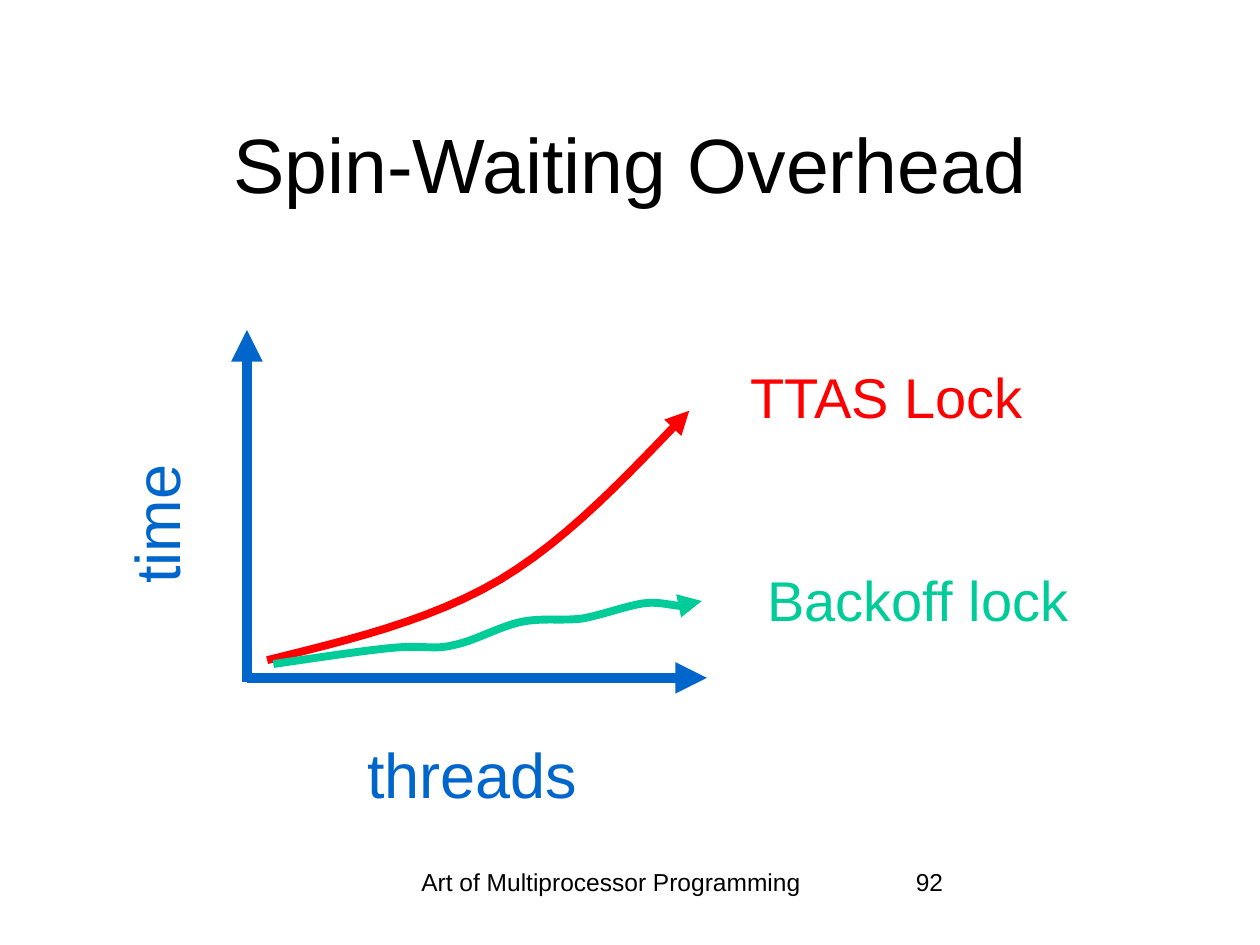
import pptx
import pptx.dml.color
import pptx.enum.shapes
import pptx.enum.text
import pptx.oxml
import pptx.oxml.ns
import pptx.util

Inches = pptx.util.Inches
ALIGN = pptx.enum.text.PP_ALIGN
ANCHOR = pptx.enum.text.MSO_ANCHOR

BLACK = pptx.dml.color.RGBColor(0x00, 0x00, 0x00)
BLUE = pptx.dml.color.RGBColor(0x00, 0x66, 0xCC)
RED = pptx.dml.color.RGBColor(0xFF, 0x00, 0x00)
GREEN = pptx.dml.color.RGBColor(0x00, 0xCC, 0x99)
FONT = "Arial"
STEPS_PER_CURVE = 12

TTAS_CURVE = [
    (0.16, 2.62), (0.8, 2.46), (1.45, 2.31), (2.01, 1.98),
    (2.56, 1.65), (3.03, 1.14), (3.51, 0.64),
]
BACKOFF_CURVE = [
    (0.21, 2.65), (0.57, 2.6), (0.94, 2.54), (1.18, 2.52),
    (1.41, 2.5), (1.48, 2.54), (1.64, 2.5),
    (1.8, 2.47), (1.99, 2.36), (2.16, 2.32),
    (2.33, 2.28), (2.49, 2.31), (2.66, 2.29),
    (2.82, 2.26), (3.01, 2.19), (3.14, 2.17),
    (3.27, 2.15), (3.38, 2.19), (3.46, 2.19),
    (3.54, 2.19), (3.57, 2.17), (3.61, 2.15),
]


def format_text(text_frame, text, size, color, alignment):
    text_frame.text = text
    paragraph = text_frame.paragraphs[0]
    paragraph.alignment = alignment
    font = paragraph.runs[0].font
    font.name = FONT
    font.size = pptx.util.Pt(size)
    font.color.rgb = color


def add_label(slide, box, text, size, color, alignment, wrap=False):
    label = slide.shapes.add_textbox(*(Inches(value) for value in box))
    label.text_frame.word_wrap = wrap
    format_text(label.text_frame, text, size, color, alignment)
    return label


def style_arrow(shape, color, width):
    shape.line.color.rgb = color
    shape.line.width = pptx.util.Pt(width)
    line = shape.line._get_or_add_ln()
    tail = pptx.oxml.parse_xml(
        f'<a:tailEnd {pptx.oxml.ns.nsdecls("a")} type="triangle"/>'
    )
    line.append(tail)


def add_axis(slide, start, end):
    points = [Inches(value) for value in (*start, *end)]
    axis = slide.shapes.add_connector(
        pptx.enum.shapes.MSO_CONNECTOR.STRAIGHT, *points
    )
    style_arrow(axis, BLUE, 6)
    effects = pptx.oxml.parse_xml(f'<a:effectLst {pptx.oxml.ns.nsdecls("a")}/>')
    axis._element.spPr.append(effects)


def bezier_point(controls, t):
    weights = ((1 - t) ** 3, 3 * t * (1 - t) ** 2, 3 * t ** 2 * (1 - t), t ** 3)
    return tuple(
        sum(weight * point[axis] for weight, point in zip(weights, controls))
        for axis in (0, 1)
    )


def add_curve(slide, left, top, controls, color):
    points = [controls[0]]
    for index in range(0, len(controls) - 1, 3):
        segment = controls[index:index + 4]
        points += [
            bezier_point(segment, step / STEPS_PER_CURVE)
            for step in range(1, STEPS_PER_CURVE + 1)
        ]
    placed = [(Inches(left + x), Inches(top + y)) for x, y in points]
    builder = slide.shapes.build_freeform(*placed[0])
    builder.add_line_segments(placed[1:], close=False)
    curve = builder.convert_to_shape()
    curve.shadow.inherit = False
    curve.fill.background()
    style_arrow(curve, color, 4.5)


def add_title(slide, box):
    title = slide.shapes.title
    title.left, title.top, title.width, title.height = (
        Inches(value) for value in box
    )
    title.text_frame.vertical_anchor = ANCHOR.MIDDLE
    format_text(title.text_frame, "Spin-Waiting Overhead", 44, BLACK, ALIGN.CENTER)


def add_plot(slide, box):
    left, top, width, height = box
    bottom = top + height
    add_axis(slide, (left, bottom + 0.03), (left, top))
    add_axis(slide, (left, bottom), (left + width, bottom))
    add_curve(slide, left, top, TTAS_CURVE, RED)
    add_curve(slide, left, top, BACKOFF_CURVE, GREEN)
    add_label(slide, (left + 3.87, top + 0.21, 2.39, 0.64),
              "TTAS Lock", 32, RED, ALIGN.RIGHT)
    add_label(slide, (left + 4.01, top + 1.82, 2.61, 0.64),
              "Backoff lock", 32, GREEN, ALIGN.RIGHT)
    add_label(slide, (left + 0.79, bottom + 0.41, 2, 0.75),
              "threads", 36, BLUE, ALIGN.CENTER)
    time_label = add_label(slide, (left - 1.38, top + 1.19, 1.3, 0.7),
                           "time", 36, BLUE, ALIGN.CENTER)
    time_label.rotation = 270


def add_footer(slide, box):
    left, top, width, height = box
    add_label(slide, (left, top, 3.92, height),
              "Art of Multiprocessor Programming", 14, BLACK, ALIGN.CENTER, True)
    add_label(slide, (left + width - 2.08, top, 2.08, height),
              "92", 14, BLACK, ALIGN.LEFT, True)


def main():
    presentation = pptx.Presentation()
    presentation.slide_width = Inches(10)
    presentation.slide_height = Inches(7.5)
    slide = presentation.slides.add_slide(presentation.slide_layouts[5])
    add_title(slide, (0.75, 0.67, 8.5, 1.25))
    add_plot(slide, (1.96, 2.62, 3.65, 2.76))
    add_footer(slide, (2.89, 6.83, 6.36, 0.5))
    presentation.save("out.pptx")


if __name__ == "__main__":
    main()
